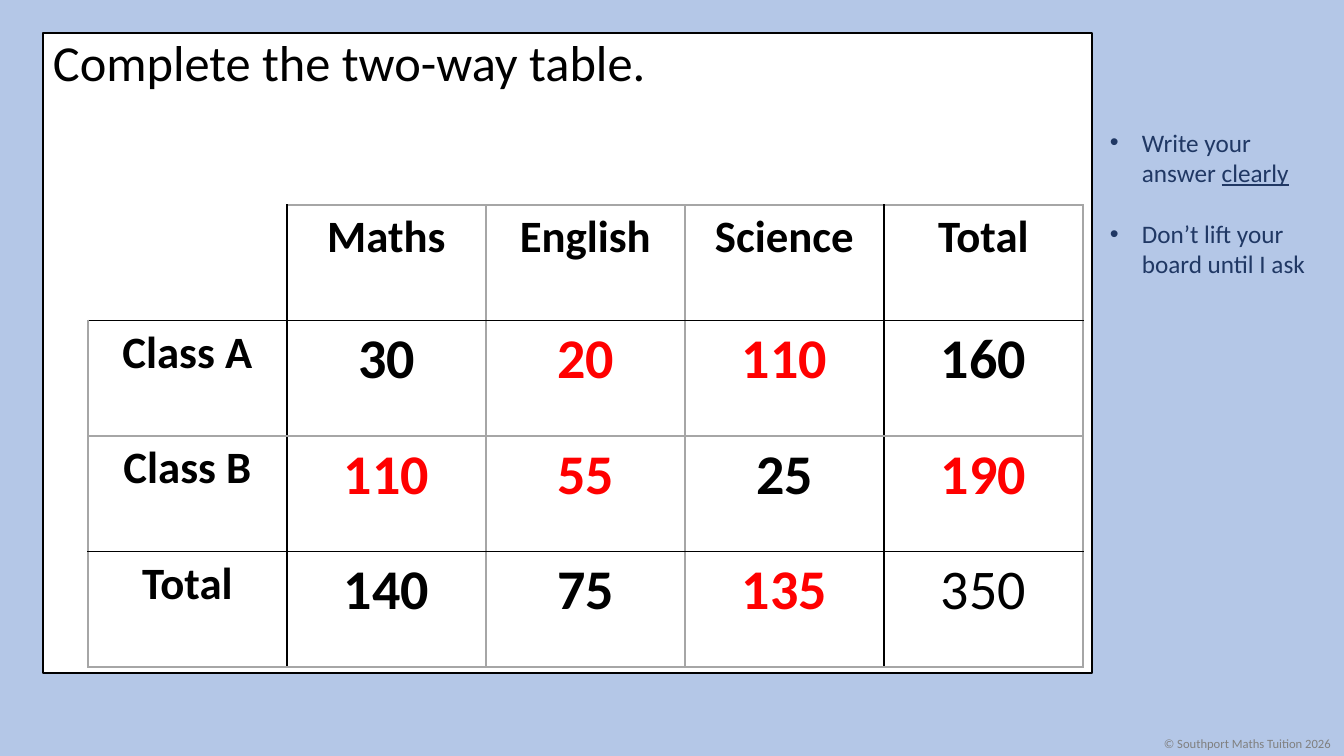
"""Build a starter slide with a two-way table, its answers and reminders."""
from lxml import etree
from pptx import Presentation
from pptx.dml.color import RGBColor
from pptx.enum.shapes import MSO_SHAPE
from pptx.enum.text import PP_ALIGN
from pptx.oxml.ns import qn
from pptx.util import Pt

RECTANGLE = MSO_SHAPE.RECTANGLE
CENTER = PP_ALIGN.CENTER

COLORS = {
    "background": "B4C7E7", "panel": "FFFFFF", "ink": "000000", "answer": "FF0000",
    "grid": "A6A6A6", "reminder": "203864", "footer": "808080",
}
FONT = "Calibri"
TITLE = "Complete the two-way table."
REMINDERS = [
    [("Write your answer ", False), ("clearly", True)],
    [("Don’t lift your board until I ask", False)],
]
FOOTER = "© Southport Maths Tuition 2026"
ROWS = [
    ["", "Maths", "English", "Science", "Total"],
    ["Class A", "30", "20", "110", "160"],
    ["Class B", "110", "55", "25", "190"],
    ["Total", "140", "75", "135", "350"],
]
ANSWERS = {(1, 2), (1, 3), (2, 1), (2, 2), (2, 4), (3, 3)}
GRAND_TOTAL = (3, 4)
HEAVY_COLUMN_EDGES = {1, 4}
HEAVY_ROW_EDGES = {1, 3}

SLIDE = (1344, 756)
PANEL = (43, 33, 1049, 640)
REMINDER_BOX = (1100, 122, 234, 163)
FOOTER_BOX = (1154, 731, 190, 25)
TABLE = (88, 205, 995, 462)


def px(*lengths):
    """Turn px lengths into EMU."""
    return [round(length * 12192000 / 1344) for length in lengths]


def color(name):
    """Look up a named colour."""
    return RGBColor.from_string(COLORS[name])


def set_font(font, size, color_name, bold=False):
    """Apply the slide's typeface."""
    font.name, font.size, font.bold = FONT, Pt(size), bold
    font.color.rgb = color(color_name)


def add_text(page, area, size, color_name, lines, wrap=True, bullet=False):
    """Add a text box whose lines are lists of (text, underlined) spans."""
    frame = page.shapes.add_textbox(*px(*area)).text_frame
    frame.word_wrap = wrap
    for number, spans in enumerate(lines):
        para = frame.paragraphs[0] if number == 0 else frame.add_paragraph()
        if bullet:
            props = para._p.get_or_add_pPr()
            indent = px(32)[0]
            props.set("marL", str(indent))
            props.set("indent", str(-indent))
            etree.SubElement(props, qn("a:buFont"), typeface="Arial")
            etree.SubElement(props, qn("a:buChar"), char="•")
        if number:
            para.space_before = Pt(22)
        set_font(para.font, size, color_name)
        for text, underlined in spans:
            span = para.add_run()
            span.text = text
            if underlined:
                span.font.underline = True
    return frame


def set_borders(cell, row, column):
    """Draw black lines on heavy edges and grey lines elsewhere."""
    edges = {
        "L": column in HEAVY_COLUMN_EDGES, "R": column + 1 in HEAVY_COLUMN_EDGES,
        "T": row in HEAVY_ROW_EDGES, "B": row + 1 in HEAVY_ROW_EDGES,
    }
    props = cell._tc.get_or_add_tcPr()
    for position, (side, heavy) in enumerate(edges.items()):
        line = etree.Element(qn(f"a:ln{side}"), w=str(Pt(1.5)))
        if (row, column) == (0, 0) and not heavy:
            etree.SubElement(line, qn("a:noFill"))
        else:
            fill = etree.SubElement(line, qn("a:solidFill"))
            etree.SubElement(fill, qn("a:srgbClr"), val=COLORS["ink" if heavy else "grid"])
        props.insert(position, line)


def add_score_table(page, answered):
    """Add the two-way table, with red answers if it is answered."""
    left, top, width, height = px(*TABLE)
    table = page.shapes.add_table(len(ROWS), len(ROWS[0]), left, top, width, height).table
    table.first_row = table.horz_banding = False
    for row, texts in enumerate(ROWS):
        for column, text in enumerate(texts):
            cell = table.cell(row, column)
            cell.fill.solid()
            cell.fill.fore_color.rgb = color("panel")
            set_borders(cell, row, column)
            is_answer = (row, column) in ANSWERS
            para = cell.text_frame.paragraphs[0]
            para.alignment = CENTER
            size = 40 if row and column else 32
            ink = "answer" if is_answer else "ink"
            set_font(para.font, size, ink, bold=(row, column) != GRAND_TOTAL)
            if text and (answered or not is_answer):
                para.add_run().text = text


def main():
    """Build and save the deck."""
    deck = Presentation()
    deck.slide_width, deck.slide_height = px(*SLIDE)
    page = deck.slides.add_slide(deck.slide_layouts[6])
    page.background.fill.solid()
    page.background.fill.fore_color.rgb = color("background")

    panel = page.shapes.add_shape(RECTANGLE, *px(*PANEL))
    panel.shadow.inherit = False
    panel.fill.solid()
    panel.fill.fore_color.rgb = color("panel")
    panel.line.color.rgb = color("ink")
    panel.line.width = Pt(1)

    add_text(page, REMINDER_BOX, 18, "reminder", REMINDERS, bullet=True)
    add_text(page, FOOTER_BOX, 9, "footer", [[(FOOTER, False)]], wrap=False)
    title = add_text(page, PANEL, 36, "ink", [[(TITLE, False)]])
    title.paragraphs[0].line_spacing = 0.9
    for answered in (False, True):
        add_score_table(page, answered)
    deck.save("out.pptx")


if __name__ == "__main__":
    main()
